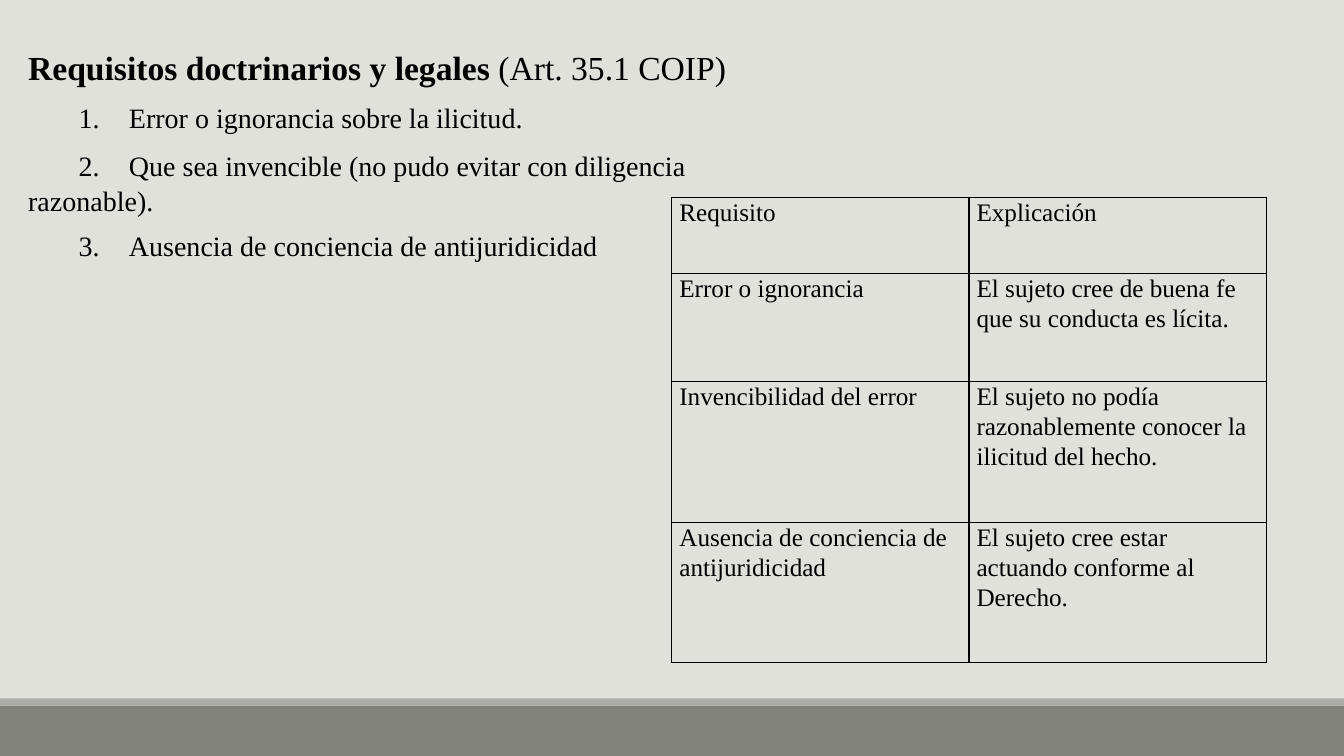
from dataclasses import dataclass

from lxml import etree
from pptx import Presentation
from pptx.dml.color import RGBColor
from pptx.enum.shapes import MSO_SHAPE
from pptx.oxml.ns import qn
from pptx.util import Cm, Pt

RECTANGLE = MSO_SHAPE.RECTANGLE

HEADING = [("Requisitos doctrinarios y legales", True), (" (Art. 35.1 COIP)", False)]
REQUIREMENTS = [
    "Error o ignorancia sobre la ilicitud.",
    "Que sea invencible (no pudo evitar con diligencia razonable).",
    "Ausencia de conciencia de antijuridicidad",
]
EXPLANATIONS = [
    ("Requisito", "Explicación"),
    ("Error o ignorancia", "El sujeto cree de buena fe que su conducta es lícita."),
    ("Invencibilidad del error",
     "El sujeto no podía razonablemente conocer la ilicitud del hecho."),
    ("Ausencia de conciencia de antijuridicidad",
     "El sujeto cree estar actuando conforme al Derecho."),
]
ROW_HEIGHTS = [1.92, 2.72, 3.55, 3.54]
COLUMN_WIDTH = 7.49
TAB_STEP = 1.27
SLIDE_WIDTH, SLIDE_HEIGHT = 33.87, 19.05


@dataclass(frozen=True)
class Theme:
    background: str = "E1E1DB"
    footer: str = "82847C"
    footer_edge: str = "ACADA8"
    ink: str = "000000"
    font: str = "Times New Roman"
    heading: int = 24
    body: int = 20
    table: int = 18
    line_spacing: float = 1.07
    space_after: int = 8


THEME = Theme()


def style_paragraph(paragraph, size, spaced=True):
    if spaced:
        paragraph.line_spacing = THEME.line_spacing
        paragraph.space_after = Pt(THEME.space_after)
    paragraph.font.name = THEME.font
    paragraph.font.size = Pt(size)
    paragraph.font.color.rgb = RGBColor.from_string(THEME.ink)


def add_tab_stops(paragraph):
    tab_stops = etree.SubElement(paragraph._p.get_or_add_pPr(), qn("a:tabLst"))
    for step in (1, 2):
        etree.SubElement(tab_stops, qn("a:tab"), pos=str(Cm(step * TAB_STEP)), algn="l")


def add_band(slide, top, height, color):
    band = slide.shapes.add_shape(RECTANGLE, 0, Cm(top), Cm(SLIDE_WIDTH), Cm(height))
    band.shadow.inherit = False
    band.fill.solid()
    band.fill.fore_color.rgb = RGBColor.from_string(color)
    band.line.fill.background()


def add_requirements(slide):
    box = slide.shapes.add_textbox(Cm(0.46), Cm(0.99), Cm(19.91), Cm(5.82))
    frame = box.text_frame
    frame.word_wrap = True
    heading = frame.paragraphs[0]
    for words, bold in HEADING:
        run = heading.add_run()
        run.text = words
        run.font.bold = bold
    style_paragraph(heading, THEME.heading)
    for number, requirement in enumerate(REQUIREMENTS, 1):
        item = frame.add_paragraph()
        item.text = f"\t{number}.\t{requirement}"
        add_tab_stops(item)
        style_paragraph(item, THEME.body, spaced=number < len(REQUIREMENTS))


def add_borders(cell):
    properties = cell._tc.get_or_add_tcPr()
    for side in ("lnL", "lnR", "lnT", "lnB"):
        border = etree.SubElement(properties, qn(f"a:{side}"), w=str(Pt(1)))
        fill = etree.SubElement(border, qn("a:solidFill"))
        etree.SubElement(fill, qn("a:srgbClr"), val=THEME.ink)


def add_explanations(slide):
    table = slide.shapes.add_table(
        len(EXPLANATIONS), 2, Cm(16.93), Cm(4.97),
        Cm(2 * COLUMN_WIDTH), Cm(sum(ROW_HEIGHTS))).table
    table.first_row = False
    table.horz_banding = False
    for column in table.columns:
        column.width = Cm(COLUMN_WIDTH)
    for row, height, texts in zip(table.rows, ROW_HEIGHTS, EXPLANATIONS):
        row.height = Cm(height)
        for cell, text in zip(row.cells, texts):
            cell.text = text
            cell.margin_left = cell.margin_right = Cm(0.19)
            cell.margin_top = cell.margin_bottom = 0
            add_borders(cell)
            cell.fill.background()
            style_paragraph(cell.text_frame.paragraphs[0], THEME.table)


def main():
    presentation = Presentation()
    presentation.slide_width = Cm(SLIDE_WIDTH)
    presentation.slide_height = Cm(SLIDE_HEIGHT)
    slide = presentation.slides.add_slide(presentation.slide_layouts[6])
    slide.background.fill.solid()
    slide.background.fill.fore_color.rgb = RGBColor.from_string(THEME.background)
    add_band(slide, 17.78, 1.27, THEME.footer)
    add_band(slide, 17.6, 0.18, THEME.footer_edge)
    add_requirements(slide)
    add_explanations(slide)
    presentation.save("out.pptx")


if __name__ == "__main__":
    main()
